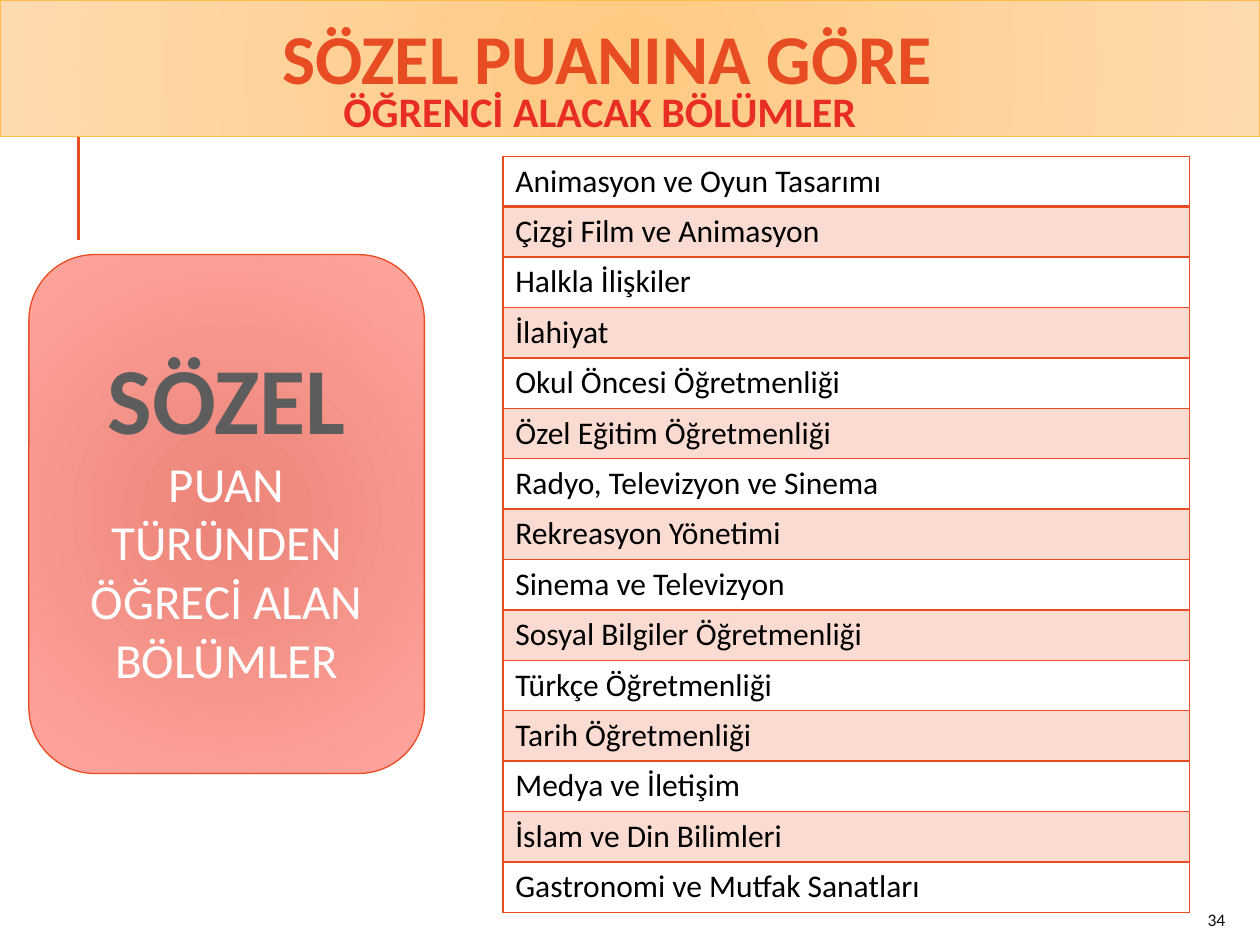
from lxml import etree
from pptx import Presentation
from pptx.dml.color import RGBColor
from pptx.enum.shapes import MSO_CONNECTOR, MSO_SHAPE
from pptx.enum.text import MSO_ANCHOR, PP_ALIGN
from pptx.oxml import parse_xml
from pptx.oxml.ns import qn
from pptx.util import Pt

CENTER, LEFT = PP_ALIGN.CENTER, PP_ALIGN.LEFT
TOP, MIDDLE = MSO_ANCHOR.TOP, MSO_ANCHOR.MIDDLE
RECTANGLE, ROUNDED = MSO_SHAPE.RECTANGLE, MSO_SHAPE.ROUNDED_RECTANGLE
STRAIGHT = MSO_CONNECTOR.STRAIGHT
NAMESPACE = "http://schemas.openxmlformats.org/drawingml/2006/main"
FONT = "Calibri"
COLORS = {
    "accent": "E84C22", "subtitle": "E82D24", "gold": "FFBD47",
    "banner_inner": "FFCA82", "banner_outer": "FFDAAF",
    "card_inner": "EC8478", "card_outer": "FFA59D",
    "card_title": "5D5D5D", "white": "FFFFFF", "black": "000000", "number": "0D0D0D",
}
DEPARTMENTS = [
    "Animasyon ve Oyun Tasarımı", "Çizgi Film ve Animasyon", "Halkla İlişkiler",
    "İlahiyat", "Okul Öncesi Öğretmenliği", "Özel Eğitim Öğretmenliği",
    "Radyo, Televizyon ve Sinema", "Rekreasyon Yönetimi", "Sinema ve Televizyon",
    "Sosyal Bilgiler Öğretmenliği", "Türkçe Öğretmenliği", "Tarih Öğretmenliği",
    "Medya ve İletişim", "İslam ve Din Bilimleri", "Gastronomi ve Mutfak Sanatları",
]


def color(name):
    return RGBColor.from_string(COLORS[name])


def points(box):
    return [Pt(value) for value in box]


def write(paragraph, text, size, color_name, bold=False, align=LEFT):
    paragraph.alignment = align
    run = paragraph.add_run()
    run.text = text
    run.font.name = FONT
    run.font.size = Pt(size)
    run.font.bold = bold
    run.font.color.rgb = color(color_name)


def add_text(slide, box, text, size, color_name, bold=False, align=LEFT, anchor=TOP):
    frame = slide.shapes.add_textbox(*points(box)).text_frame
    frame.word_wrap = True
    frame.vertical_anchor = anchor
    write(frame.paragraphs[0], text, size, color_name, bold, align)


def add_glowing_shape(slide, kind, box, inner, outer, line):
    shape = slide.shapes.add_shape(kind, *points(box))
    shape.shadow.inherit = False
    gradient = parse_xml(
        f'<a:gradFill xmlns:a="{NAMESPACE}" rotWithShape="1"><a:gsLst>'
        f'<a:gs pos="0"><a:srgbClr val="{COLORS[inner]}"/></a:gs>'
        f'<a:gs pos="100000"><a:srgbClr val="{COLORS[outer]}"/></a:gs></a:gsLst>'
        '<a:path path="circle"><a:fillToRect l="100000" t="100000" r="100000" b="100000"/>'
        '</a:path></a:gradFill>')
    shape._element.spPr.find(qn("a:prstGeom")).addnext(gradient)
    shape.line.color.rgb = color(line)
    shape.line.width = Pt(0.75)
    return shape


def add_stem(slide, box):
    left, top, _, height = box
    stem = slide.shapes.add_connector(STRAIGHT, *points((left, top + height, left, top)))
    stem.line.color.rgb = color("accent")
    stem.line.width = Pt(1.5)
    etree.SubElement(stem._element.spPr, qn("a:effectLst"))


def add_card(slide, box):
    card = add_glowing_shape(slide, ROUNDED, box, "card_inner", "card_outer", "accent")
    frame = card.text_frame
    frame.word_wrap = True
    frame.vertical_anchor = MIDDLE
    write(frame.paragraphs[0], "SÖZEL", 54, "card_title", True, CENTER)
    write(frame.add_paragraph(), "PUAN TÜRÜNDEN ÖĞRECİ ALAN BÖLÜMLER", 28, "white",
          False, CENTER)


def add_banner(slide, box):
    left, top, width, height = box
    add_glowing_shape(slide, RECTANGLE, box, "banner_inner", "banner_outer", "gold")
    add_text(slide, (left - 13, top + 5, width, height + 7), "SÖZEL PUANINA GÖRE",
             40, "accent", True, CENTER)
    add_text(slide, (left + 19.5, top + 45.5, width - 73.5, 36),
             "ÖĞRENCİ ALACAK BÖLÜMLER", 24, "subtitle", True, CENTER)


def add_borders(cell, bottom_width):
    properties = cell._tc.get_or_add_tcPr()
    for side, width in (("L", 1), ("R", 1), ("T", 1), ("B", bottom_width)):
        border = etree.SubElement(properties, qn(f"a:ln{side}"), w=str(Pt(width)))
        fill = etree.SubElement(border, qn("a:solidFill"))
        etree.SubElement(fill, qn("a:srgbClr"), val=COLORS["accent"])


def tint(cell):
    cell.fill.solid()
    cell.fill.fore_color.rgb = color("accent")
    shade = cell._tc.tcPr.find(qn("a:solidFill"))[0]
    etree.SubElement(shade, qn("a:alpha"), val="20000")


def add_departments(slide, box):
    height = box[3]
    table = slide.shapes.add_table(len(DEPARTMENTS), 1, *points(box)).table
    table.first_row = False
    table.horz_banding = False
    for index, department in enumerate(DEPARTMENTS):
        table.rows[index].height = Pt(height / len(DEPARTMENTS))
        cell = table.cell(index, 0)
        cell.margin_top = cell.margin_bottom = Pt(3.3)
        add_borders(cell, 2 if index == 0 else 1)
        if index % 2:
            tint(cell)
        else:
            cell.fill.background()
        write(cell.text_frame.paragraphs[0], department, 18, "black")


def main():
    presentation = Presentation()
    presentation.slide_width = Pt(720)
    presentation.slide_height = Pt(540)
    slide = presentation.slides.add_slide(presentation.slide_layouts[6])
    add_stem(slide, (44.8, 65, 0, 72))
    add_card(slide, (16.5, 145.5, 226, 296.5))
    add_banner(slide, (0, 0, 720, 78))
    add_text(slide, (683, 511, 25.5, 29), "34", 10, "number", anchor=MIDDLE)
    add_departments(slide, (287.3, 89.3, 392.4, 432))
    presentation.save("out.pptx")


if __name__ == "__main__":
    main()
